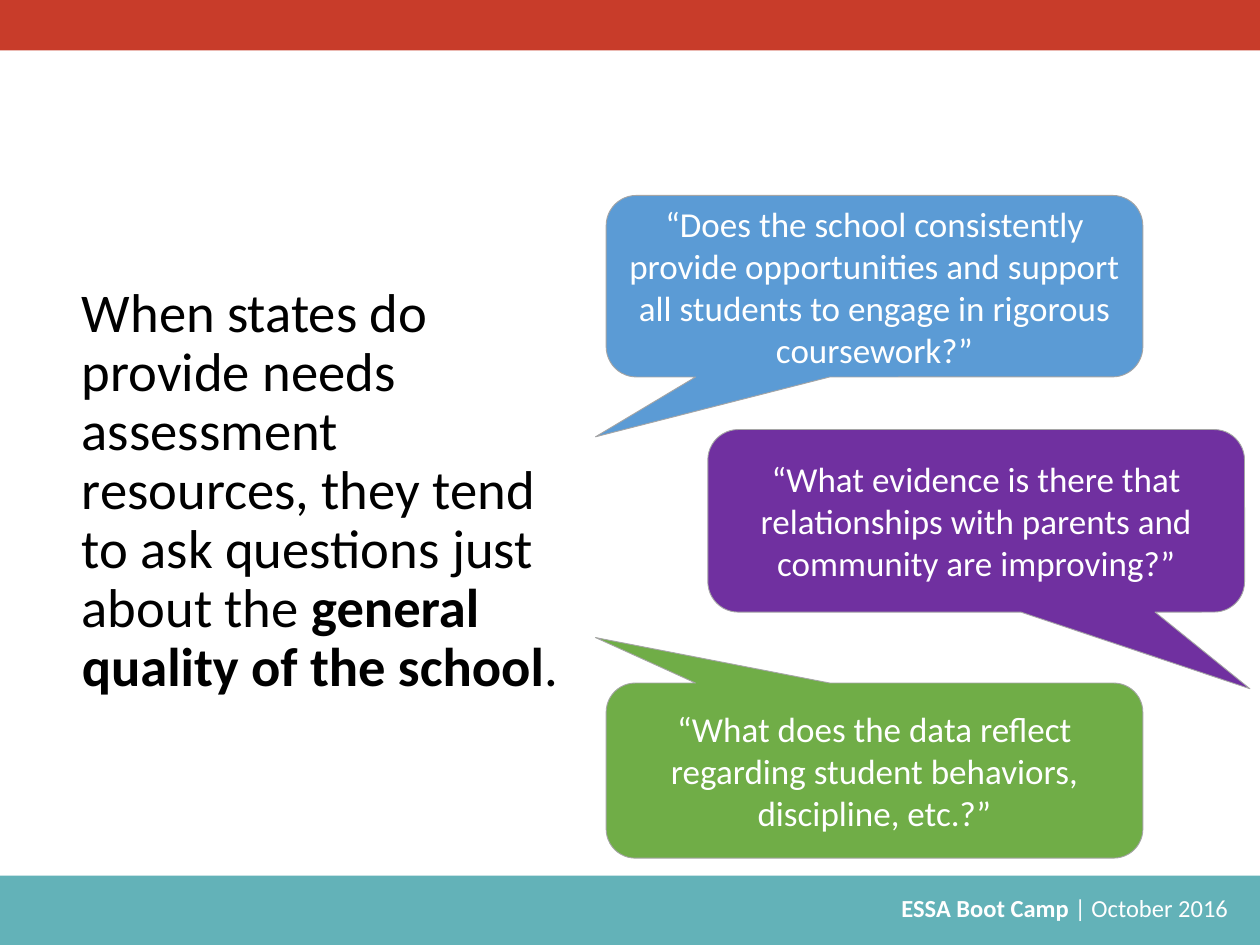
"""Build the slide on school quality questions with three speech callouts."""
from pptx import Presentation
from pptx.dml.color import RGBColor as Rgb
from pptx.enum.shapes import MSO_SHAPE as Kind
from pptx.enum.text import MSO_ANCHOR as Anchor, PP_ALIGN as Align
from pptx.util import Cm, Pt

HUES = {
    "red": "C83C2A", "teal": "63B2B8", "blue": "5B9BD5", "plum": "7030A0",
    "green": "70AD47", "gray": "A5A5A5", "white": "FFFFFF", "black": "000000",
}


def write(shape, *runs, size, hue="white", align=Align.LEFT, anchor=Anchor.MIDDLE, space=None):
    """Fill a shape with one paragraph of (text, bold) runs."""
    frame = shape.text_frame
    frame.word_wrap = True
    frame.vertical_anchor = anchor
    para = frame.paragraphs[0]
    para.alignment = align
    para.line_spacing = space
    for text, bold in runs:
        run = para.add_run()
        run.text = text
        font = run.font
        font.name, font.size, font.bold = "Calibri", Pt(size), bold
        font.color.rgb = Rgb.from_string(HUES[hue])


def draw(kind, hue, *box):
    """Add a filled shape without shadow or line."""
    shape = slide.shapes.add_shape(kind, *map(Cm, box))
    shape.shadow.inherit = False
    shape.fill.solid()
    shape.fill.fore_color.rgb = Rgb.from_string(HUES[hue])
    shape.line.fill.background()
    return shape


deck = Presentation()
deck.slide_width, deck.slide_height = Cm(25.4), Cm(19.05)
slide = deck.slides.add_slide(deck.slide_layouts[6])

draw(Kind.RECTANGLE, "teal", 0, 17.65, 25.4, 1.4)
draw(Kind.RECTANGLE, "red", 0, 0, 25.4, 1.02)
foot = slide.shapes.add_textbox(Cm(9.14), Cm(17.88), Cm(15.98), Cm(0.86))
write(foot, ("ESSA Boot Camp ", True), ("| October 2016 ", False),
      size=14, align=Align.RIGHT, anchor=Anchor.TOP)

quotes = [
    ("plum", 14.27, 8.66, 3.68, (0.51, 0.92),
     "“What evidence is there that relationships with parents and community are improving?”"),
    ("blue", 12.22, 3.94, 3.66, (-0.52, 0.83),
     "“Does the school consistently provide opportunities and support all students "
     "to engage in rigorous coursework?”"),
    ("green", 12.22, 13.77, 3.53, (-0.52, -0.76),
     "“What does the data reflect regarding student behaviors, discipline, etc.?”"),
]
for hue, left, top, high, tip, text in quotes:
    quote = draw(Kind.ROUNDED_RECTANGULAR_CALLOUT, hue, left, top, 10.82, high)
    quote.adjustments[0], quote.adjustments[1] = tip
    quote.line.color.rgb = Rgb.from_string(HUES["gray"])
    quote.line.width = Pt(0.5)
    write(quote, (text, False), size=20, align=Align.CENTER)

claim = slide.shapes.add_textbox(Cm(1.4), Cm(3.51), Cm(10.46), Cm(12.8))
write(claim,
      ("When states do provide needs assessment resources, they tend to ask "
       "questions just about the ", False),
      ("general quality of the school", True), (".", False),
      size=31.2, hue="black", space=0.9)

deck.save("out.pptx")
